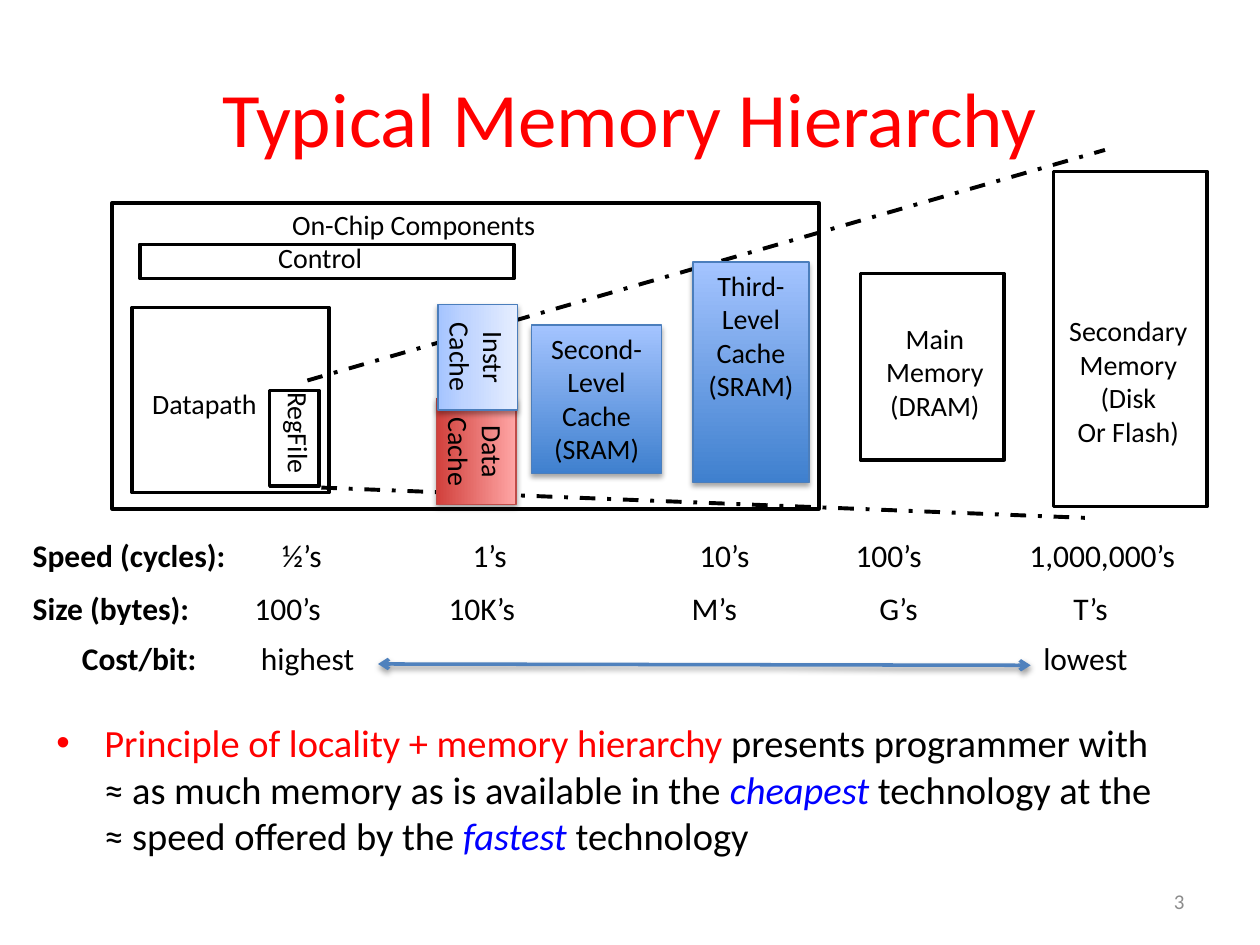
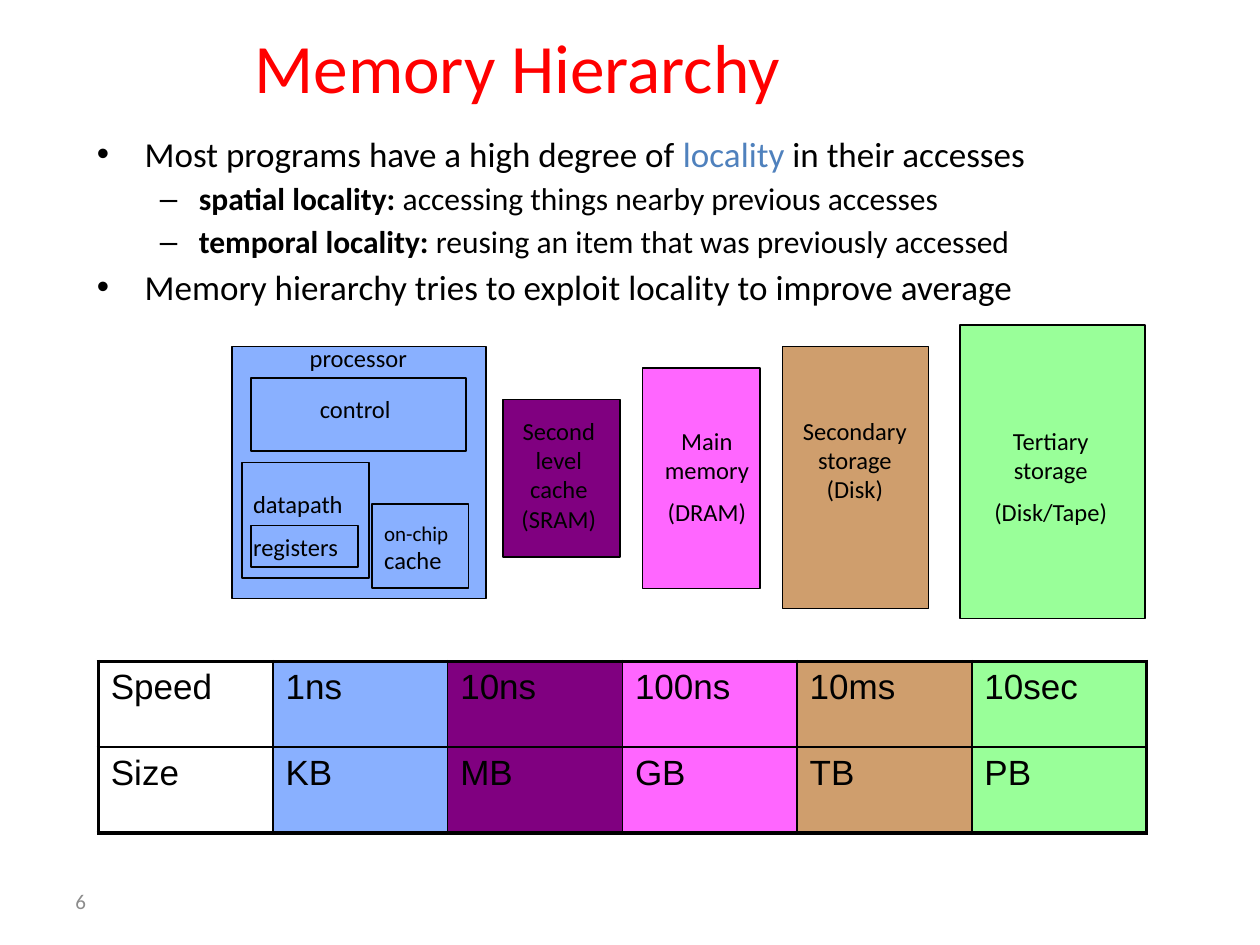
from dataclasses import dataclass

from lxml.etree import SubElement
from pptx import Presentation
from pptx.dml.color import RGBColor
from pptx.enum.dml import MSO_LINE
from pptx.enum.shapes import MSO_CONNECTOR as CONNECTOR, MSO_SHAPE as SHAPE
from pptx.enum.text import MSO_ANCHOR as ANCHOR, PP_ALIGN as ALIGN
from pptx.oxml.ns import qn
from pptx.util import Inches, Pt


@dataclass(frozen=True)
class Theme:
    font: str = "Calibri"
    table_font: str = "Arial"
    ink: str = "000000"
    title: str = "FF0000"
    emphasis: str = "0000FF"
    accent: str = "4F81BD"
    muted: str = "8C8C8C"
    processor: str = "89B0FF"
    cache: str = "800080"
    memory: str = "FF66FF"
    disk: str = "CF9E6D"
    tape: str = "99FF99"
    title_size: float = 44
    small_title_size: float = 39.6
    lead_size: float = 22
    bullet_size: float = 20
    row_size: float = 18
    label_size: float = 16
    part_size: float = 14
    note_size: float = 12


T = Theme()
WIDTH, HEIGHT = 10, 7.5
LEFT, CENTER, RIGHT = ALIGN.LEFT, ALIGN.CENTER, ALIGN.RIGHT

# Gradient stops run from the bottom of a box to its top; the last item is its outline.
BLUE = ((0, "3F80CE"), (100, "A4C4FF")), "4B7EBC"
RED = ((0, "D1403C"), (100, "FFA6A5")), "BF4C48"
PALE = ((0, "A4C4FF"), (35, "BFD4FF"), (100, "E6EEFF")), "4B7EBC"

# Slide 1: frames, labels (place, lines, alignment, rotation), caches, rows
CHIP_FRAMES = [
    (1.11, 1.94, 2.97, 0.27), (1.05, 2.44, 1.56, 1.47), (8.36, 1.36, 1.22, 2.66),
    (0.89, 1.61, 5.61, 2.43), (2.14, 3.1, 0.39, 0.76), (6.83, 2.17, 1.14, 1.48),
]
CHIP_LABELS = [
    ((2.11, 1.86, 0.95, 0.36), ["Control"], LEFT, 0),
    ((1.11, 3.02, 1.1, 0.36), ["Datapath"], LEFT, 0),
    ((8.38, 2.44, 1.15, 1.18), ["Secondary", "Memory", "(Disk", "Or Flash)"], CENTER, 0),
    ((2.22, 1.6, 2.35, 0.36), ["On-Chip Components"], LEFT, 0),
    ((1.82, 3.39, 1.11, 0.36), ["RegFile"], LEFT, 90),
    ((6.92, 2.5, 1, 0.9), ["Main", "Memory", "(DRAM)"], CENTER, 0),
]
ZOOM_LINES = [((2.44, 3.02), (8.77, 1.19)), ((2.55, 3.87), (8.61, 4.11))]
CACHES = [
    ((4.22, 2.58, 1.03, 1.18), ["Second-Level", "Cache", "(SRAM)"], BLUE, 0),
    ((3.36, 3.27, 0.84, 0.63), ["Data", "Cache"], RED, 90),
    ((3.37, 2.52, 0.84, 0.63), ["Instr", "Cache"], PALE, 90),
    ((5.5, 2.08, 0.92, 1.75), ["Third-Level", "Cache", "(SRAM)"], BLUE, 0),
]
# Row top, label x, label, then each value with its x
FACT_ROWS = [
    (4.27, 0.26, "Speed (cycles):", [(2.24, "½’s"), (3.75, "1’s"), (5.55, "10’s"),
                                     (6.79, "100’s"), (8.17, "1,000,000’s")]),
    (4.69, 0.26, "Size (bytes):", [(2.02, "100’s"), (3.56, "10K’s"), (5.49, "M’s"),
                                   (6.98, "G’s"), (8.52, "T’s")]),
    (5.09, 0.65, "Cost/bit:", [(2.07, "highest"), (8.28, "lowest")]),
]
COST_ARROW = (3, 5.27), (8.18, 5.28)
PRINCIPLE = [(0, [
    ("Principle of locality + memory hierarchy ", {"color": T.title}),
    ("presents programmer with ≈ as much memory as is available in the ", {}),
    ("cheapest ", {"color": T.emphasis, "italic": True}),
    ("technology at the ≈ speed offered by the ", {}),
    ("fastest ", {"color": T.emphasis, "italic": True}),
    ("technology", {}),
])]

# Slide 2: bullets (level, runs), processor parts, storage levels, table
LOCALITY = [
    (0, [("Most programs have a high degree of ", {}), ("locality", {"color": T.accent}),
         (" in their accesses", {})]),
    (1, [("spatial locality:", {"bold": True}),
         (" accessing things nearby previous accesses", {})]),
    (1, [("temporal locality:", {"bold": True}),
         (" reusing an item that was previously accessed", {})]),
    (0, [("Memory hierarchy tries to exploit locality to improve average", {})]),
]
LEVEL_BOXES = [
    ((1.84, 2.75, 2.02, 2), T.processor), ((3.99, 3.17, 0.93, 1.25), T.cache),
    ((5.1, 2.92, 0.93, 1.75), T.memory), ((6.21, 2.75, 1.16, 2.08), T.disk),
    ((7.62, 2.58, 1.47, 2.33), T.tape),
]
PART_FRAMES = [
    (1.99, 3, 1.71, 0.58), (1.99, 4.17, 0.85, 0.33),
    (2.95, 4, 0.77, 0.67), (1.92, 3.67, 1.01, 0.92),
]
PART_LABELS = [
    ((1.91, 4.17, 1.02, 0.33), ["registers"], LEFT),
    ((1.91, 3.83, 1.01, 0.33), ["datapath"], LEFT),
    ((2.44, 3.08, 0.86, 0.33), ["control"], LEFT),
    ((2.36, 2.67, 1.14, 0.33), ["processor"], LEFT),
    ((2.95, 4.08, 0.85, 0.53), [[("on-chip ", {"size": T.note_size}), ("cache", {})]], LEFT),
    ((3.91, 3.25, 1.05, 1.03), ["Second level cache (SRAM)"], CENTER),
    ((5.1, 3.33, 1.02, 0.91), ["Main memory", "(DRAM)"], CENTER),
    ((6.16, 3.25, 1.25, 0.8), ["Secondary storage (Disk)"], CENTER),
    ((7.66, 3.33, 1.36, 0.91), ["Tertiary storage", "(Disk/Tape)"], CENTER),
]
LEVEL_TABLE = [
    ["Speed", "1ns", "10ns", "100ns", "10ms", "10sec"],
    ["Size", "KB", "MB", "GB", "TB", "PB"],
]
TABLE_AT = 0.78, 5.25, 8.32, 1.36


def rgb(code):
    return RGBColor.from_string(code)


def inches(values):
    return [Inches(v) for v in values]


def sub(parent, tag, **attrs):
    return SubElement(parent, qn(tag), {k: str(v) for k, v in attrs.items()})


def add_run(p, text, size, color=T.ink, bold=False, italic=False, font=T.font):
    r = p.add_run()
    r.text = text
    r.font.name, r.font.size = font, Pt(size)
    r.font.bold, r.font.italic = bold, italic
    r.font.color.rgb = rgb(color)


def write(tf, lines, size, align=LEFT, gap=0, **style):
    """Fill a frame; a line is a string or a list of (text, style) runs."""
    tf.word_wrap = True
    for i, line in enumerate(lines):
        p = tf.add_paragraph() if i else tf.paragraphs[0]
        p.alignment = align
        if i and gap:
            p.space_before = Pt(gap)
        for text, own in [(line, {})] if isinstance(line, str) else line:
            add_run(p, text, **{"size": size, **style, **own})


def label(slide, at, lines, size, align=LEFT, anchor=ANCHOR.TOP, rotation=0, **style):
    s = slide.shapes.add_textbox(*inches(at))
    s.rotation = rotation
    s.text_frame.vertical_anchor = anchor
    write(s.text_frame, lines, size, align, **style)
    return s


def box(slide, at, line_width, fill=None, line=T.ink):
    s = slide.shapes.add_shape(SHAPE.RECTANGLE, *inches(at))
    s.shadow.inherit = False
    s.line.color.rgb, s.line.width = rgb(line), Pt(line_width)
    if fill:
        s.fill.solid()
        s.fill.fore_color.rgb = rgb(fill)
    else:
        s.fill.background()
    return s


def cast_shadow(spPr, opacity):
    effects = spPr.find(qn("a:effectLst"))
    if effects is None:
        effects = sub(spPr, "a:effectLst")
    shadow = sub(effects, "a:outerShdw", blurRad=Pt(3.1), dist=Pt(1.8),
                 dir=5400000, rotWithShape=0)
    sub(sub(shadow, "a:srgbClr", val=T.ink), "a:alpha", val=opacity * 1000)


def cache(slide, at, lines, look, rotation):
    stops, outline = look
    s = box(slide, at, 0.75, line=outline)
    s.rotation = rotation
    s.fill.gradient()
    s.fill.gradient_angle = 90
    spPr = s._element.spPr
    stop_list = spPr.find(".//" + qn("a:gsLst"))
    stop_list.clear()
    for position, color in stops:
        sub(sub(stop_list, "a:gs", pos=position * 1000), "a:srgbClr", val=color)
    cast_shadow(spPr, 35)
    s.text_frame.vertical_anchor = ANCHOR.TOP
    write(s.text_frame, lines, T.label_size, CENTER)


def connect(slide, start, end, color, width):
    s = slide.shapes.add_connector(CONNECTOR.STRAIGHT, *inches(start + end))
    s.line.color.rgb, s.line.width = rgb(color), Pt(width)
    sub(s._element.spPr, "a:effectLst")
    return s


def bullets(slide, at, items, sizes, gap=0):
    s = label(slide, at, [runs for _, runs in items], sizes[0], gap=gap)
    for p, (level, _) in zip(s.text_frame.paragraphs, items):
        margin, hang, mark = ((0.38, 0.38, "•"), (0.81, 0.31, "–"))[level]
        pPr = p._p.get_or_add_pPr()
        pPr.set("marL", str(Inches(margin)))
        pPr.set("indent", str(-Inches(hang)))
        sub(pPr, "a:buFont", typeface="Arial")
        sub(pPr, "a:buChar", char=mark)
        for r in p.runs:
            r.font.size = Pt(sizes[level])


def fact_row(slide, top, left, name, values):
    """One line of text whose values stand at tab stops."""
    inset = 0.07
    runs = [(name, {"bold": True})] + [("\t" + v, {}) for _, v in values]
    s = label(slide, (left - inset, top, 9.6 - left, 0.32), [runs], T.row_size)
    tf = s.text_frame
    tf.margin_left = tf.margin_right = Inches(inset)
    tf.margin_top = tf.margin_bottom = Inches(0.03)
    p = tf.paragraphs[0]
    p.line_spacing = 0.85
    tabs = sub(p._p.get_or_add_pPr(), "a:tabLst")
    for x, _ in values:
        sub(tabs, "a:tab", pos=Inches(x - left), algn="l")


def new_slide(prs, title, title_at, title_size, number, number_left, number_align):
    slide = prs.slides.add_slide(prs.slide_layouts[6])
    label(slide, title_at, [title], title_size, CENTER, ANCHOR.MIDDLE, color=T.title)
    label(slide, (number_left, 6.95, 2.33, 0.4), [number], T.note_size, number_align,
          ANCHOR.MIDDLE, color=T.muted)
    return slide


def border(cell, widths):
    tcPr = cell._tc.get_or_add_tcPr()
    for i, (side, width) in enumerate(zip("LRTB", widths)):
        ln = sub(tcPr, "a:ln" + side, w=Pt(width))
        sub(sub(ln, "a:solidFill"), "a:srgbClr", val=T.ink)
        tcPr.insert(i, ln)


def level_table(slide):
    rows, cols = len(LEVEL_TABLE), len(LEVEL_TABLE[0])
    table = slide.shapes.add_table(rows, cols, *inches(TABLE_AT)).table
    table.first_row = table.horz_banding = False
    fills = [None] + [color for _, color in LEVEL_BOXES]
    for i, row in enumerate(LEVEL_TABLE):
        for j, text in enumerate(row):
            cell = table.cell(i, j)
            write(cell.text_frame, [text], T.bullet_size, font=T.table_font)
            if fills[j]:
                cell.fill.solid()
                cell.fill.fore_color.rgb = rgb(fills[j])
            else:
                cell.fill.background()
            outer = j == 0, j == cols - 1, i == 0, i == rows - 1
            border(cell, [2.25 if edge else 1 for edge in outer])


def typical_hierarchy(prs):
    slide = new_slide(prs, "Typical Memory Hierarchy", (0.5, 0.3, 9, 1.25), T.title_size,
                      "3", 7.17, RIGHT)
    for at in CHIP_FRAMES:
        box(slide, at, 2)
    for at, lines, align, rotation in CHIP_LABELS:
        label(slide, at, lines, T.label_size, align, rotation=rotation)
    for start, end in ZOOM_LINES:
        connect(slide, start, end, T.ink, 2.25).line.dash_style = MSO_LINE.DASH_DOT
    for part in CACHES:
        cache(slide, *part)
    for row in FACT_ROWS:
        fact_row(slide, *row)
    arrow = connect(slide, *COST_ARROW, T.accent, 2)
    for end in ("a:headEnd", "a:tailEnd"):
        sub(arrow.line._get_or_add_ln(), end, type="arrow")
    cast_shadow(arrow._element.spPr, 38)
    bullets(slide, (0.35, 5.66, 9, 1.31), PRINCIPLE, [T.lead_size])


def storage_levels(prs):
    slide = new_slide(prs, "Memory Hierarchy", (0.88, 0.34, 6.45, 0.37), T.small_title_size,
                      "6", 0.5, LEFT)
    bullets(slide, (0.67, 1, 8.75, 1.46), LOCALITY, [T.bullet_size, T.row_size], gap=3)
    for at, color in LEVEL_BOXES:
        box(slide, at, 1, color)
    for at in PART_FRAMES:
        box(slide, at, 1)
    for at, lines, align in PART_LABELS:
        label(slide, at, lines, T.part_size, align, gap=7)
    level_table(slide)


def main():
    prs = Presentation()
    prs.slide_width, prs.slide_height = inches((WIDTH, HEIGHT))
    typical_hierarchy(prs)
    storage_levels(prs)
    prs.save("out.pptx")


if __name__ == "__main__":
    main()
